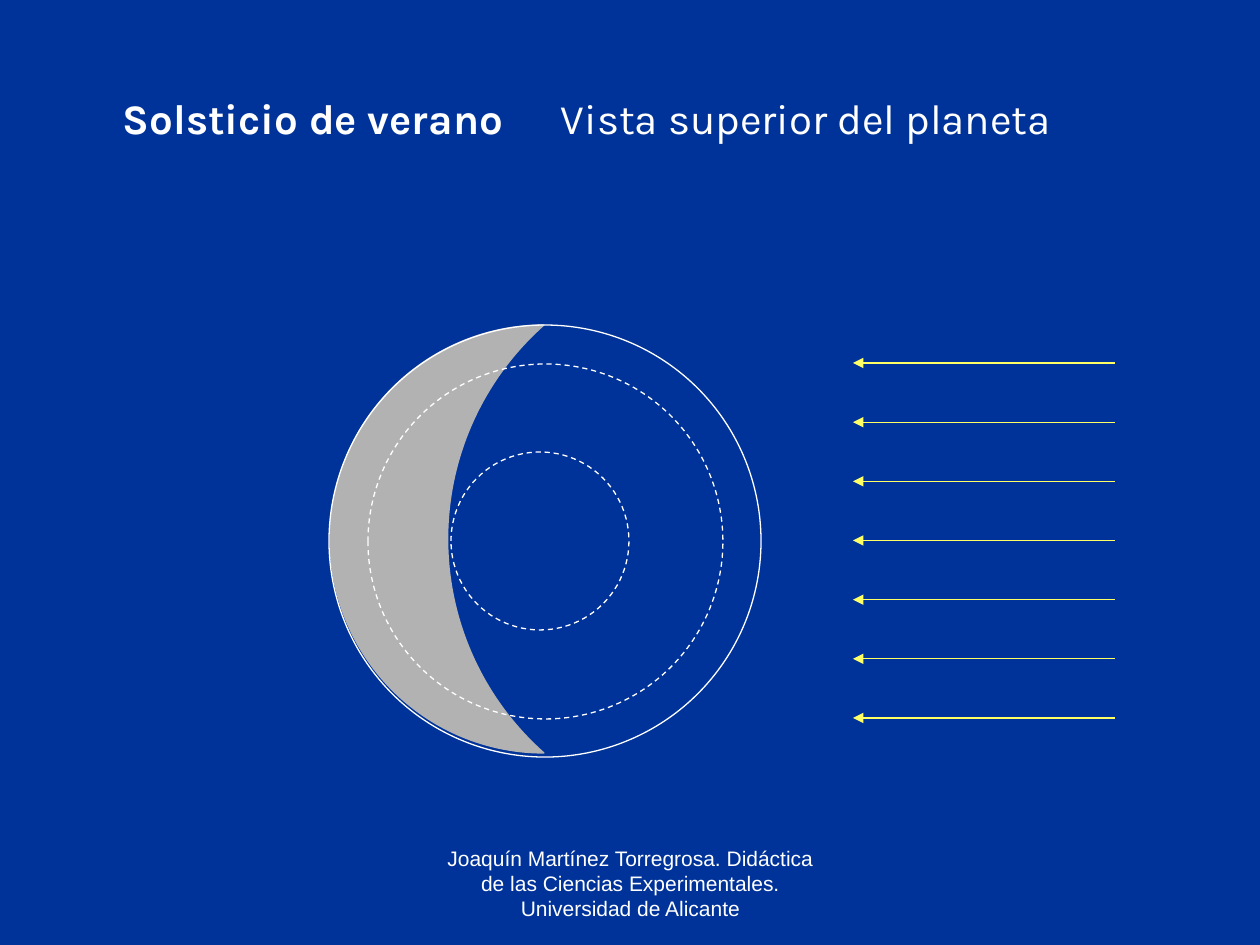
"""Build the summer solstice slide: the planet seen from above and the sun's rays."""
from lxml import etree
from pptx import Presentation
from pptx import util as u
from pptx.dml.color import RGBColor
from pptx.enum import dml, shapes, text
from pptx.oxml.ns import qn

PX = u.Inches(1) / 126
COLORS = {"sky": "003399", "night": "B2B2B2", "ray": "FFFF66", "white": "FFFFFF"}
RAY_COUNT, RAY_TOP, RAY_BOTTOM = 7, 363, 718
RAY_START, RAY_END = 1115, 853


def px(*lengths):
    return [u.Emu(round(length * PX)) for length in lengths]


def color(name):
    return RGBColor.from_string(COLORS[name])


def style_line(shape, name):
    shape.line.color.rgb = color(name)
    shape.line.width = u.Pt(0.75)


def add_figure(page, kind, frame, line, fill=None, dashed=False):
    figure = page.shapes.add_shape(kind, *px(*frame))
    figure.shadow.inherit = False
    style_line(figure, line)
    if fill:
        figure.fill.solid()
        figure.fill.fore_color.rgb = color(fill)
    else:
        figure.fill.background()
    if dashed:
        figure.line.dash_style = dml.MSO_LINE.DASH
    return figure


def add_circle(page, left, top, size, dashed=False):
    add_figure(page, shapes.MSO_SHAPE.OVAL, (left, top, size, size), "white", dashed=dashed)


def add_ray(page, y):
    ray = page.shapes.add_connector(
        shapes.MSO_CONNECTOR.STRAIGHT, *px(RAY_START, y, RAY_END, y))
    style_line(ray, "ray")
    etree.SubElement(ray.line._get_or_add_ln(), qn("a:tailEnd"), type="triangle")
    etree.SubElement(ray._element.spPr, qn("a:effectLst"))


def write_text(box, frame, wording, font, size, bold=False, anchor=text.MSO_ANCHOR.TOP):
    box.left, box.top, box.width, box.height = px(*frame)
    body = box.text_frame
    body.word_wrap = True
    body.auto_size = text.MSO_AUTO_SIZE.NONE
    body.vertical_anchor = anchor
    body.text = wording
    para = body.paragraphs[0]
    para.alignment = text.PP_ALIGN.CENTER
    span = para.runs[0]
    span.font.name = font
    span.font.size = u.Pt(size)
    span.font.bold = bold
    span.font.color.rgb = color("white")


def add_text(page, frame, *args, **options):
    write_text(page.shapes.add_textbox(*px(*frame)), frame, *args, **options)


def main():
    deck = Presentation()
    deck.slide_width, deck.slide_height = px(1260, 945)
    page = deck.slides.add_slide(deck.slide_layouts[5])
    page.background.fill.solid()
    page.background.fill.fore_color.rgb = color("sky")

    night = add_figure(page, shapes.MSO_SHAPE.MOON, (330, 325, 214, 428), "night", "night")
    night.adjustments[0] = 0.55
    add_circle(page, 329, 325, 432)
    add_circle(page, 368, 364, 355, dashed=True)
    add_circle(page, 451, 452, 178, dashed=True)

    gap = (RAY_BOTTOM - RAY_TOP) / (RAY_COUNT - 1)
    for index in range(RAY_COUNT):
        add_ray(page, RAY_TOP + index * gap)

    write_text(page.shapes.title, (78, 86, 470, 79), "Solsticio de verano",
               "Karla", 24, bold=True)
    add_text(page, (491, 86, 630, 89), "Vista superior del planeta", "Karla", 24)
    add_text(page, (431, 861, 399, 66),
             "Joaquín Martínez Torregrosa. Didáctica de las Ciencias Experimentales. "
             "Universidad de Alicante",
             "Arial", 12, anchor=text.MSO_ANCHOR.BOTTOM)
    deck.save("out.pptx")


if __name__ == "__main__":
    main()
